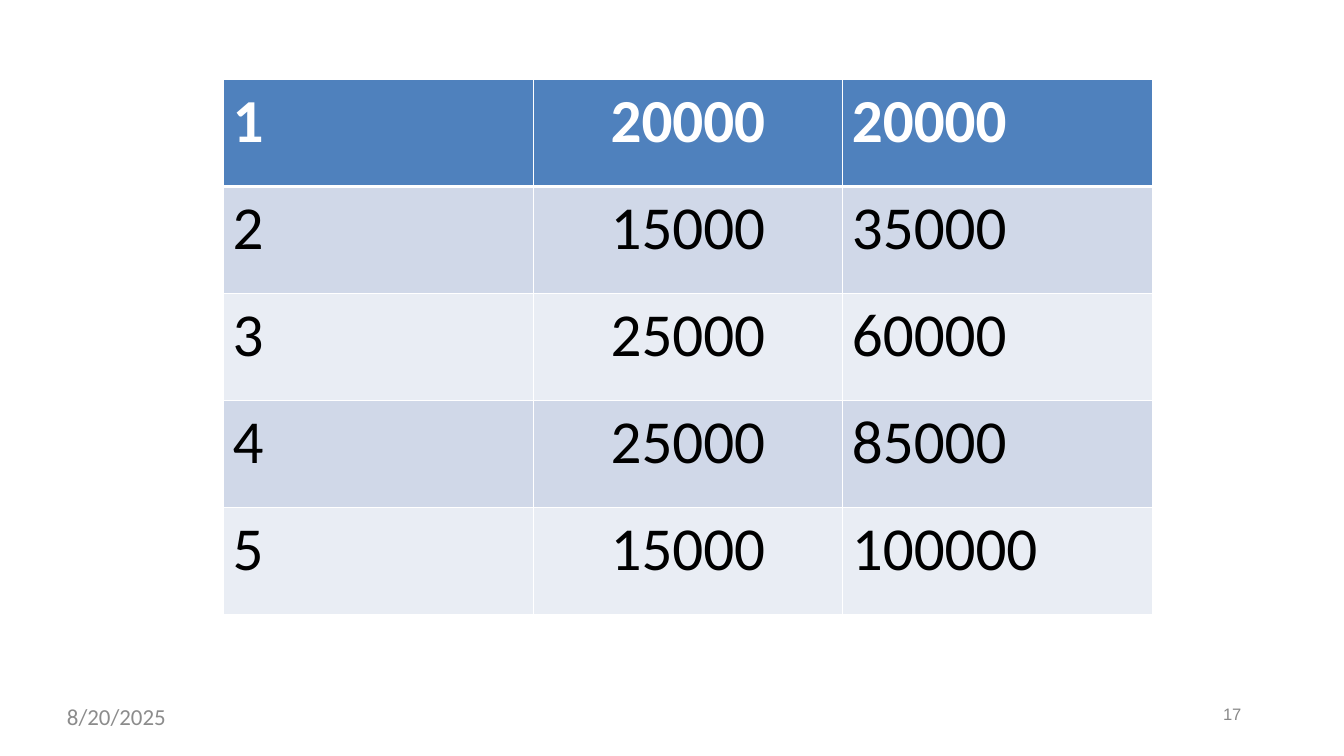
import dataclasses
import itertools

import lxml.etree
import pptx
import pptx.dml.color
import pptx.enum.text
import pptx.oxml.ns
import pptx.table
import pptx.util

SLIDE_WIDTH = pptx.util.Inches(14.67)
SLIDE_HEIGHT = pptx.util.Inches(8.25)
COLORS = {
    "header": "4F81BD",
    "band_dark": "D0D8E8",
    "band_light": "E9EDF4",
    "white": "FFFFFF",
    "black": "000000",
    "date": "8C8C8C",
    "number": "888888",
}
FLOWS = [20000, 15000, 25000, 25000, 15000]
ALIGN = pptx.enum.text.PP_ALIGN


@dataclasses.dataclass
class Area:
    """A rectangle in percent of the slide's width and height."""
    left: float
    top: float
    width: float
    height: float

    def lengths(self) -> list[int]:
        return [
            round(share * side / 100)
            for share, side in zip(
                (self.left, self.top, self.width, self.height),
                (SLIDE_WIDTH, SLIDE_HEIGHT) * 2,
            )
        ]


@dataclasses.dataclass
class Footer:
    text: str
    area: Area
    size: float
    font: str
    color: str


TABLE_AREA = Area(16.63, 10.55, 69.12, 70.79)
DATE = Footer("8/20/2025", Area(4.98, 92.97, 22.97, 3.64), 18, "Calibri", "date")
NUMBER = Footer("17", Area(90.12, 93.21, 2.32, 5.09), 13, "Arial", "number")


def style_span(span, size: float, font: str, color: str, bold: bool = False) -> None:
    span.font.size = pptx.util.Pt(size)
    span.font.name = font
    span.font.bold = bold
    span.font.color.rgb = pptx.dml.color.RGBColor.from_string(COLORS[color])


def draw_border(cell: pptx.table._Cell, side: str, points: float) -> None:
    name = pptx.oxml.ns.qn
    properties = cell._tc.get_or_add_tcPr()
    line = lxml.etree.SubElement(
        properties, name(f"a:ln{side}"), w=str(pptx.util.Pt(points))
    )
    fill = lxml.etree.SubElement(line, name("a:solidFill"))
    lxml.etree.SubElement(fill, name("a:srgbClr"), val=COLORS["white"])


def draw_cell(cell: pptx.table._Cell, value: int, row: int, column: int) -> None:
    is_header = row == 0
    cell.text_frame.text = str(value)
    para = cell.text_frame.paragraphs[0]
    para.alignment = ALIGN.CENTER if column == 1 else ALIGN.LEFT
    style_span(para.runs[0], 48, "Calibri", "white" if is_header else "black", is_header)

    # A thicker rule separates the header from the body
    widths = {"L": 1, "R": 1, "T": 3 if row == 1 else 1, "B": 3 if is_header else 1}
    for side, points in widths.items():
        draw_border(cell, side, points)

    band = "header" if is_header else ("band_light", "band_dark")[row % 2]
    cell.fill.solid()
    cell.fill.fore_color.rgb = pptx.dml.color.RGBColor.from_string(COLORS[band])


def draw_table(page, flows: list[int]) -> None:
    records = list(zip(itertools.count(1), flows, itertools.accumulate(flows)))
    frame = page.shapes.add_table(len(records), 3, *TABLE_AREA.lengths())
    for row, record in enumerate(records):
        for column, value in enumerate(record):
            draw_cell(frame.table.cell(row, column), value, row, column)


def draw_footer(page, footer: Footer):
    box = page.shapes.add_textbox(*footer.area.lengths())
    frame = box.text_frame
    frame.word_wrap = True
    frame.margin_left = frame.margin_right = 0
    frame.margin_top = frame.margin_bottom = 0
    frame.text = footer.text
    para = frame.paragraphs[0]
    style_span(para.runs[0], footer.size, footer.font, footer.color)
    return para


def main() -> None:
    deck = pptx.Presentation()
    deck.slide_width = SLIDE_WIDTH
    deck.slide_height = SLIDE_HEIGHT
    page = deck.slides.add_slide(deck.slide_layouts[6])

    # Slide number, indented and slightly tightened
    number = draw_footer(page, NUMBER)
    number.line_spacing = pptx.util.Pt(15.3)
    number._p.get_or_add_pPr().set("marL", str(pptx.util.Inches(0.13)))
    number.runs[0].font._element.set("spc", "-10")

    # Yearly amounts with their running total
    draw_table(page, FLOWS)

    # Date
    draw_footer(page, DATE)

    deck.save("out.pptx")


if __name__ == "__main__":
    main()
